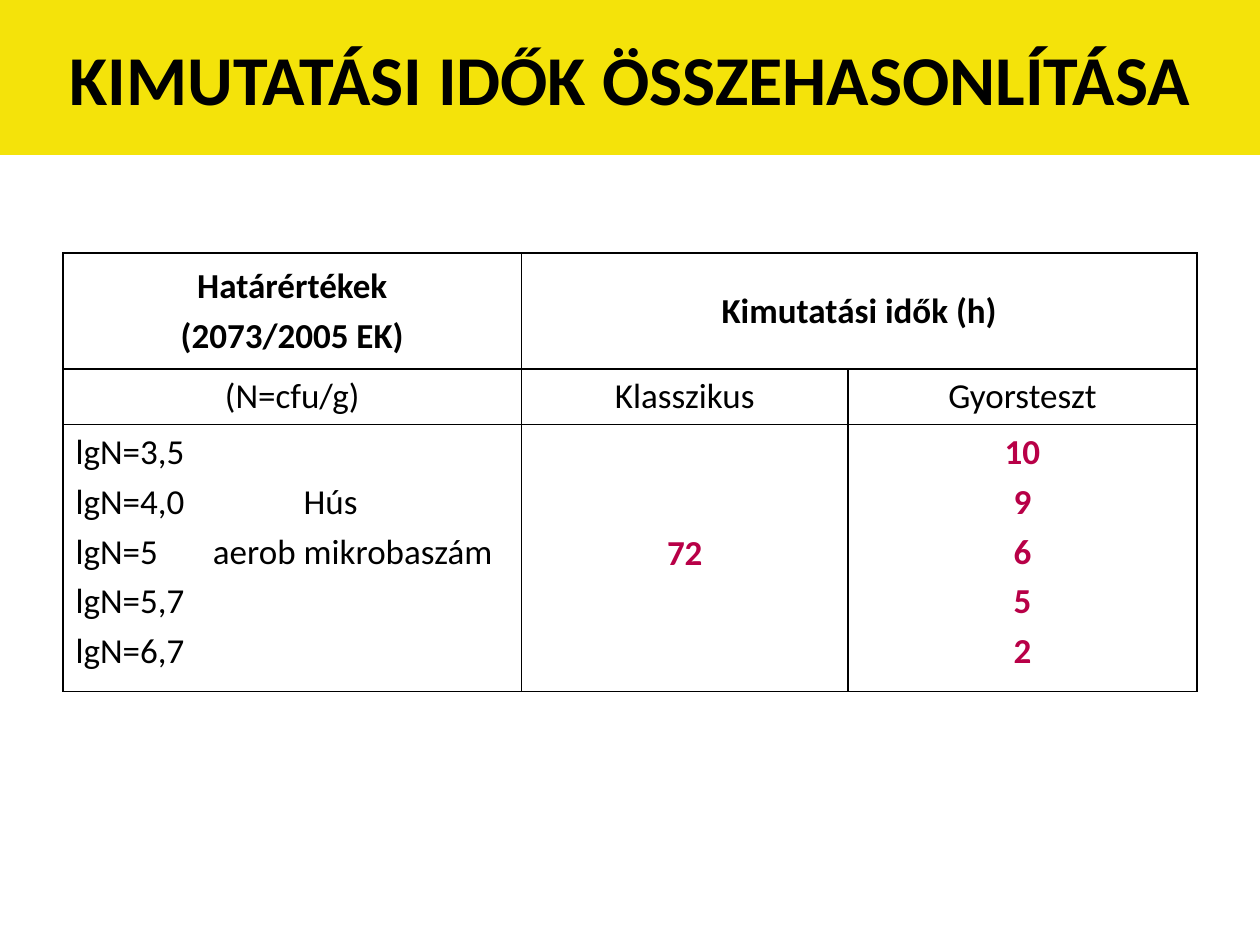
import pptx
import pptx.dml.color
import pptx.enum.shapes
import pptx.enum.text
import pptx.oxml
import pptx.oxml.ns
import pptx.util
from lxml import etree

ALIGN = pptx.enum.text.PP_ALIGN
ANCHOR = pptx.enum.text.MSO_ANCHOR
TEXT_SIZE = 20
LINE_PITCH = 0.4  # inches from one table line to the next
LIMIT_LINES = [
    "lgN=3,5",
    "lgN=4,0\tHús",
    "lgN=5\taerob mikrobaszám",
    "lgN=5,7",
    "lgN=6,7",
]
TAB_STOPS = {1: 1.81, 2: 1.09}  # line number: inches
MICRO_HOURS = ["10", "9", "6", "5", "2"]


def color(hex_string):
    return pptx.dml.color.RGBColor.from_string(hex_string)


class TimesSlide:
    font = "Calibri"
    black = "000000"
    yellow = "F4E30A"
    crimson = "B80047"

    def __init__(self, deck):
        self.width, self.height = deck.slide_width, deck.slide_height
        self.slide = deck.slides.add_slide(deck.slide_layouts[6])

    def box(self, left, top, width, height):
        """Turn shares of the slide's size into lengths."""
        return (int(left * self.width), int(top * self.height),
                int(width * self.width), int(height * self.height))

    def set_lines(self, frame, lines, size, bold, ink, align, tab_stops=None):
        frame.text = "\n".join(lines)
        for number, paragraph in enumerate(frame.paragraphs):
            paragraph.alignment = align
            if number:
                paragraph.space_before = pptx.util.Pt(size / 5)
            if tab_stops and number in tab_stops:
                self.tab_stop(paragraph, tab_stops[number])
            for run in paragraph.runs:
                run.font.name = self.font
                run.font.size = pptx.util.Pt(size)
                run.font.bold = bold
                run.font.color.rgb = color(ink)

    def tab_stop(self, paragraph, inches):
        stops = etree.SubElement(paragraph._p.get_or_add_pPr(),
                                 pptx.oxml.ns.qn("a:tabLst"))
        etree.SubElement(stops, pptx.oxml.ns.qn("a:tab"),
                         pos=str(pptx.util.Inches(inches)), algn="l")

    def banner(self, title, height):
        band = self.slide.shapes.add_shape(
            pptx.enum.shapes.MSO_SHAPE.RECTANGLE, *self.box(0, 0, 1, height))
        band.shadow.inherit = False
        band.fill.solid()
        band.fill.fore_color.rgb = color(self.yellow)
        band.line.fill.background()
        band.text_frame.word_wrap = True
        band.text_frame.vertical_anchor = ANCHOR.MIDDLE
        self.set_lines(band.text_frame, [title], 40, True, self.black, ALIGN.CENTER)

    def grid(self, left, top, column_shares, row_shares):
        frame = self.slide.shapes.add_table(
            len(row_shares), len(column_shares),
            *self.box(left, top, sum(column_shares), sum(row_shares)))
        table = frame.table
        table.first_row = table.horz_banding = False
        for column, share in zip(table.columns, column_shares):
            column.width = int(share * self.width)
        for row, share in zip(table.rows, row_shares):
            row.height = int(share * self.height)
        for cell in table.iter_cells():
            self.outline(cell)
            cell.fill.background()
        return table

    def outline(self, cell):
        for side in ("lnL", "lnR", "lnT", "lnB"):
            cell._tc.get_or_add_tcPr().append(pptx.oxml.parse_xml(
                f'<a:{side} {pptx.oxml.ns.nsdecls("a")} w="{pptx.util.Pt(1)}">'
                f'<a:solidFill><a:srgbClr val="{self.black}"/></a:solidFill>'
                f'</a:{side}>'))

    def cell(self, cell, lines, bold=False, ink=black, align=ALIGN.CENTER,
             anchor=ANCHOR.TOP, skipped_lines=0, tab_stops=None):
        cell.vertical_anchor = anchor
        if skipped_lines:
            cell.margin_top = pptx.util.Inches(0.05 + skipped_lines * LINE_PITCH)
        self.set_lines(cell.text_frame, lines, TEXT_SIZE, bold, ink, align, tab_stops)


def main():
    deck = pptx.Presentation()
    deck.slide_width = pptx.util.Inches(10)
    deck.slide_height = pptx.util.Inches(7.5)
    page = TimesSlide(deck)
    page.banner("KIMUTATÁSI IDŐK ÖSSZEHASONLÍTÁSA", 1.23 / 7.5)

    times = page.grid(0.05, 2.01 / 7.5, [0.364, 0.259, 0.277],
                      [height / 7.5 for height in (0.92, 0.44, 2.12)])
    times.cell(0, 1).merge(times.cell(0, 2))
    for column, heading in enumerate([["Határértékek", "(2073/2005 EK)"],
                                      ["Kimutatási idők (h)"]]):
        page.cell(times.cell(0, column), heading, bold=True, anchor=ANCHOR.MIDDLE)
    for column, label in enumerate(["(N=cfu/g)", "Klasszikus", "Gyorsteszt"]):
        page.cell(times.cell(1, column), [label])

    page.cell(times.cell(2, 0), LIMIT_LINES, align=ALIGN.LEFT, tab_stops=TAB_STOPS)
    page.cell(times.cell(2, 1), ["72"], bold=True, ink=page.crimson, skipped_lines=2)
    page.cell(times.cell(2, 2), MICRO_HOURS, bold=True, ink=page.crimson)
    deck.save("out.pptx")


if __name__ == "__main__":
    main()
